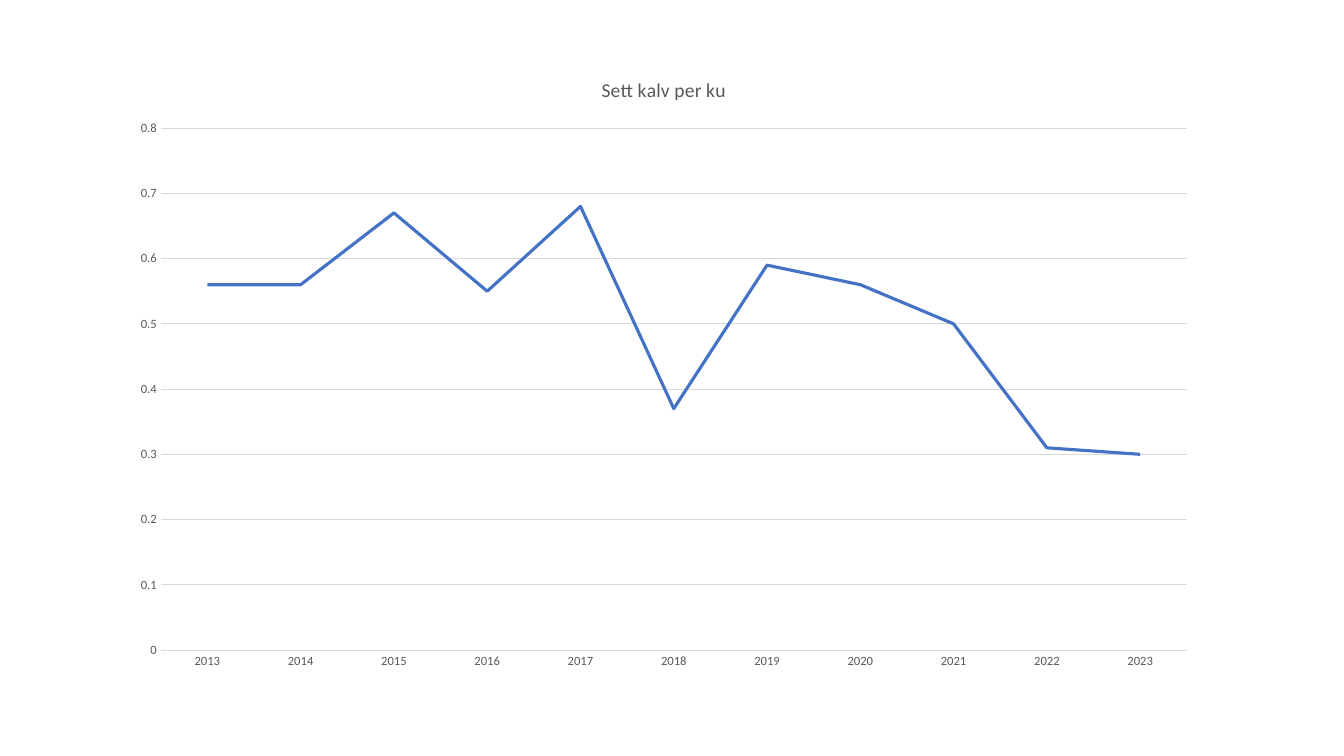
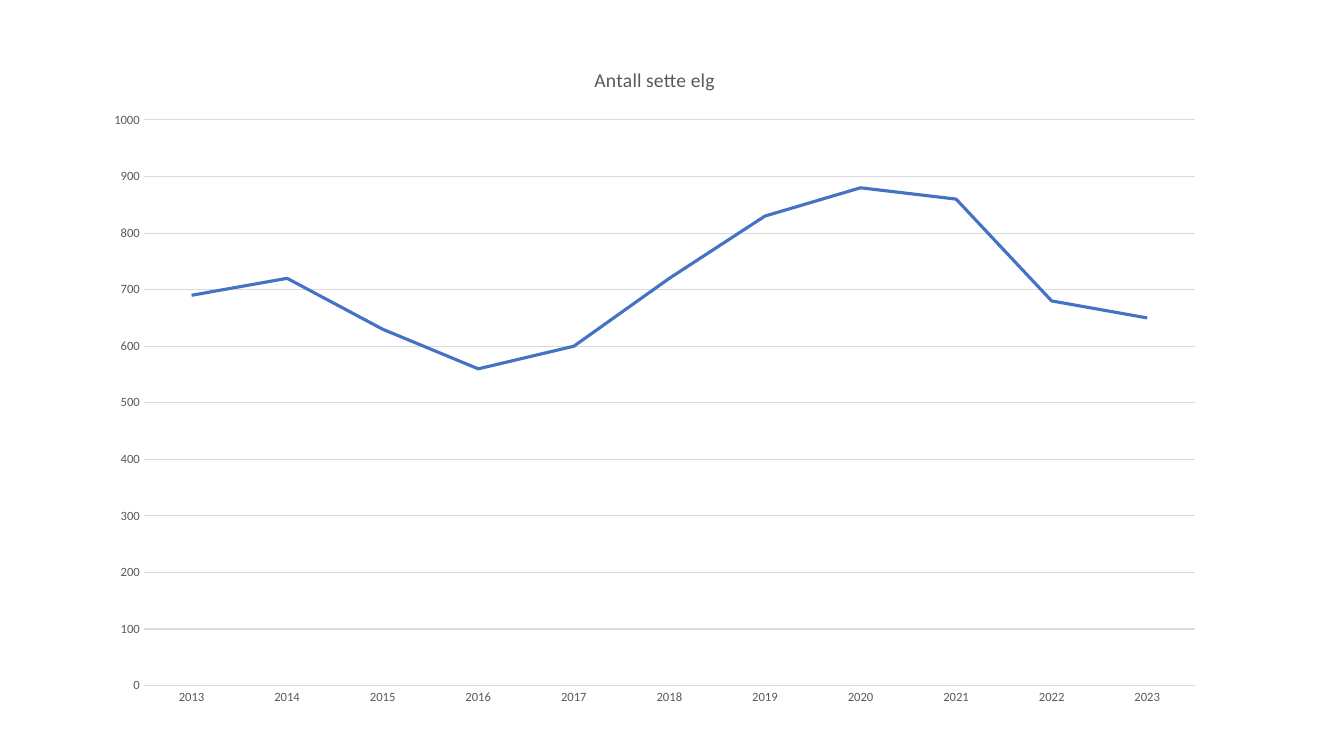
"""Build two line-chart slides on moose observations, 2013 to 2023."""
from pptx import Presentation
from pptx.chart.data import CategoryChartData
from pptx.dml.color import RGBColor
from pptx.enum import chart as ch
from pptx.util import Pt

FONT = "Calibri"
GREY = RGBColor(0x59, 0x59, 0x59)
RULE = RGBColor(0xD9, 0xD9, 0xD9)
BLUE = RGBColor(0x44, 0x72, 0xC4)

YEARS = [str(year) for year in range(2013, 2024)]
CHARTS = [
    dict(title="Sett kalv per ku", box=(85, 38.9, 778.3, 447.8), top=0.8, step=0.1,
         values=[0.56, 0.56, 0.67, 0.55, 0.68, 0.37, 0.59, 0.56, 0.5, 0.31, 0.3]),
    dict(title="Antall sette elg", box=(65.5, 31.7, 804.2, 481), top=1000, step=100,
         values=[690, 720, 630, 560, 600, 720, 830, 880, 860, 680, 650]),
]


def style_font(font, size, color=GREY):
    font.name, font.size, font.bold = FONT, Pt(size), False
    font.color.rgb = color


def style_line(line, color, width):
    line.color.rgb = color
    line.width = Pt(width)


def write(tf, text, size, color=GREY):
    r = tf.paragraphs[0].add_run()
    r.text = text
    style_font(r.font, size, color)


def style_axis(axis):
    axis.major_tick_mark = axis.minor_tick_mark = ch.XL_TICK_MARK.NONE
    style_font(axis.tick_labels.font, 9)


def add_line_chart(s, title, box, top, step, values):
    data = CategoryChartData(number_format="General")
    data.categories = YEARS
    data.add_series(title, values)
    chart = s.shapes.add_chart(
        ch.XL_CHART_TYPE.LINE, *map(Pt, box), data).chart
    chart.has_legend = False
    chart.has_title = True
    style_font(chart.font, 10)
    write(chart.chart_title.text_frame, title, 14)
    chart.chart_title.include_in_layout = False

    years, scale = chart.category_axis, chart.value_axis
    style_axis(years)
    style_line(years.format.line, RULE, 0.75)
    style_axis(scale)
    scale.format.line.fill.background()
    scale.minimum_scale, scale.maximum_scale = 0, top
    scale.major_unit = step
    style_line(scale.major_gridlines.format.line, RULE, 0.75)

    plot = chart.plots[0]
    plot.vary_by_categories = False
    series = plot.series[0]
    series.smooth = False
    series.marker.style = ch.XL_MARKER_STYLE.NONE
    style_line(series.format.line, BLUE, 2.25)


def main():
    prs = Presentation()
    prs.slide_width, prs.slide_height = Pt(960), Pt(540)
    blank = prs.slide_layouts[6]
    for content in CHARTS:
        add_line_chart(prs.slides.add_slide(blank), **content)
    prs.save("out.pptx")


if __name__ == "__main__":
    main()
